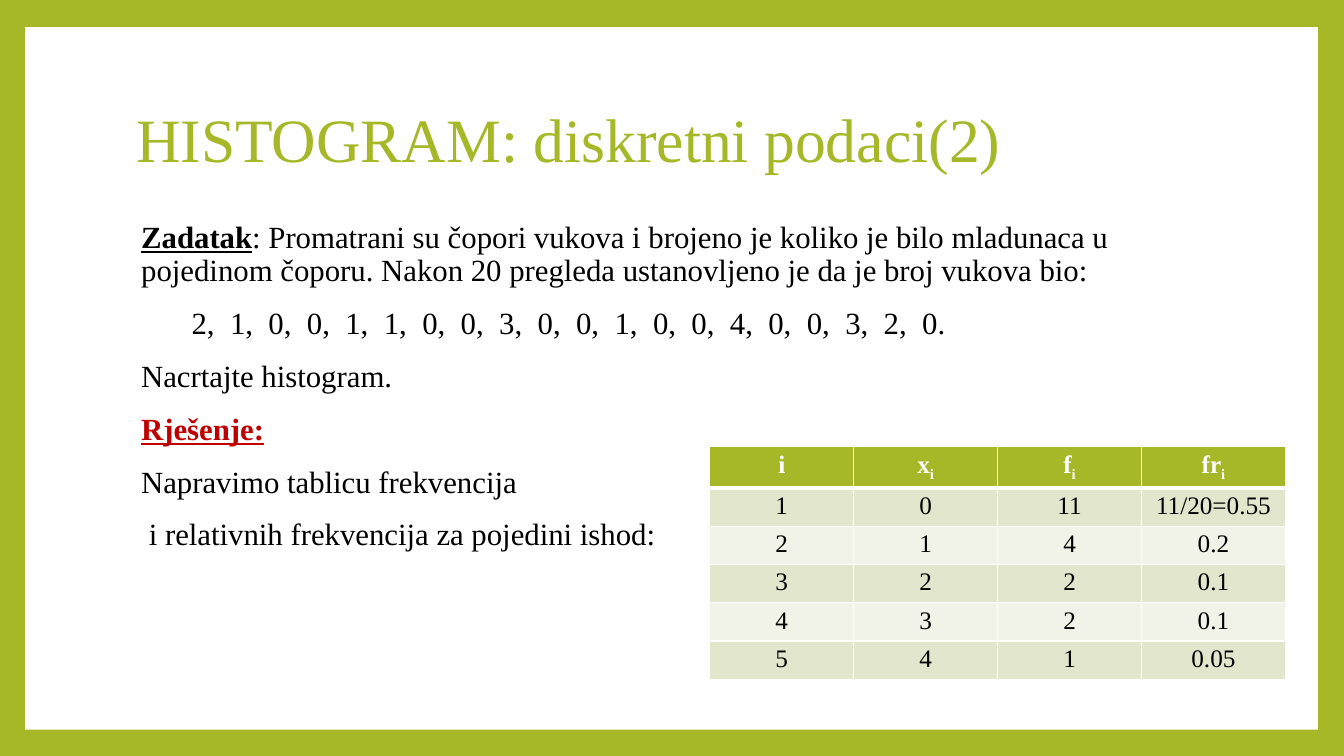
from lxml.etree import SubElement
from pptx import Presentation
from pptx.dml.color import RGBColor
from pptx.enum.shapes import MSO_SHAPE
from pptx.enum.text import MSO_ANCHOR, MSO_AUTO_SIZE, PP_ALIGN
from pptx.oxml.ns import qn
from pptx.util import Inches, Pt

GREEN = RGBColor(0xA6, 0xB7, 0x27)
DARK_BAND = RGBColor(0xE1, 0xE6, 0xCD)
LIGHT_BAND = RGBColor(0xF1, 0xF3, 0xE8)
WHITE = RGBColor(0xFF, 0xFF, 0xFF)
BLACK = RGBColor(0, 0, 0)
RED = RGBColor(0xC0, 0, 0)

TITLE = "HISTOGRAM: diskretni podaci(2)"
# Each paragraph: heading part, plain part, colour
BODY = [
    ("Zadatak", ": Promatrani su čopori vukova i brojeno je koliko je bilo mladunaca u "
     "pojedinom čoporu. Nakon 20 pregleda ustanovljeno je da je broj vukova bio:", BLACK),
    ("", "\t2,  1,  0,  0,  1,  1,  0,  0,  3,  0,  0,  1,  0,  0,  4,  0,  0,  3,  2,  0.", BLACK),
    ("", "Nacrtajte histogram.", BLACK),
    ("Rješenje:", "", RED),
    ("", "Napravimo tablicu frekvencija", BLACK),
    ("", " i relativnih frekvencija za pojedini ishod:", BLACK),
]
# Each header: symbol, subscript
HEADERS = [("i", ""), ("x", "i"), ("f", "i"), ("fr", "i")]
FREQUENCIES = [
    ("1", "0", "11", "11/20=0.55"),
    ("2", "1", "4", "0.2"),
    ("3", "2", "2", "0.1"),
    ("4", "3", "2", "0.1"),
    ("5", "4", "1", "0.05"),
]


class SlideBuilder:
    font_name = "Times New Roman"

    def __init__(self, presentation):
        self.slide = presentation.slides.add_slide(presentation.slide_layouts[1])
        self.shapes = self.slide.shapes

    def background(self, color):
        fill = self.slide.background.fill
        fill.solid()
        fill.fore_color.rgb = color

    def panel(self, left, top, width, height):
        """Add a white rectangle behind everything else."""
        shape = self.shapes.add_shape(MSO_SHAPE.RECTANGLE, Inches(left), Inches(top),
                                      Inches(width), Inches(height))
        shape.shadow.inherit = False
        shape.fill.solid()
        shape.fill.fore_color.rgb = WHITE
        shape.line.fill.background()
        self.shapes.element.insert(2, shape.element)

    def style(self, paragraph, size, color, bold=False):
        font = paragraph.font
        font.name, font.size, font.bold = self.font_name, Pt(size), bold
        font.color.rgb = color

    def place(self, placeholder, left, top, width, height, anchor):
        placeholder.left, placeholder.top = Inches(left), Inches(top)
        placeholder.width, placeholder.height = Inches(width), Inches(height)
        frame = placeholder.text_frame
        frame.word_wrap = True
        frame.auto_size = MSO_AUTO_SIZE.NONE
        frame.vertical_anchor = anchor
        return frame

    def title(self, text, *box):
        frame = self.place(self.shapes.title, *box, MSO_ANCHOR.MIDDLE)
        frame.text = text
        paragraph = frame.paragraphs[0]
        paragraph.alignment = PP_ALIGN.LEFT
        paragraph.line_spacing = 0.9
        self.style(paragraph, 44, GREEN)

    def body(self, items, *box):
        frame = self.place(self.slide.placeholders[1], *box, MSO_ANCHOR.TOP)
        for index, (heading, text, color) in enumerate(items):
            paragraph = frame.add_paragraph() if index else frame.paragraphs[0]
            paragraph.line_spacing = 0.9
            paragraph.space_before = Pt(14)
            properties = paragraph._p.get_or_add_pPr()
            properties.set("marL", str(Inches(0.05)))
            properties.set("indent", "0")
            SubElement(properties, qn("a:buNone"))
            self.style(paragraph, 22, color)
            if heading:
                run = paragraph.add_run()
                run.text = heading
                run.font.bold = run.font.underline = True
            if text:
                paragraph.add_run().text = text

    def borders(self, cell, bottom):
        properties = cell._tc.get_or_add_tcPr()
        for side, width in (("L", 1), ("R", 1), ("T", 1), ("B", bottom)):
            line = SubElement(properties, qn(f"a:ln{side}"), w=str(Pt(width)))
            fill = SubElement(line, qn("a:solidFill"))
            SubElement(fill, qn("a:srgbClr"), val=str(WHITE))

    def cell(self, cell, text, subscript, fill, color, bold=False, bottom=1):
        self.borders(cell, bottom)
        cell.fill.solid()
        cell.fill.fore_color.rgb = fill
        cell.margin_top = cell.margin_bottom = Inches(0.04)
        paragraph = cell.text_frame.paragraphs[0]
        paragraph.alignment = PP_ALIGN.CENTER
        self.style(paragraph, 18, color, bold)
        paragraph.add_run().text = text
        if subscript:
            run = paragraph.add_run()
            run.text = subscript
            run._r.get_or_add_rPr().set("baseline", "-25000")

    def table(self, headers, rows, left, top, width, header_height, row_height):
        height = header_height + row_height * len(rows)
        table = self.shapes.add_table(len(rows) + 1, len(headers), Inches(left), Inches(top),
                                      Inches(width), Inches(height)).table
        for row in table.rows:
            row.height = Inches(row_height)
        table.rows[0].height = Inches(header_height)
        for column, (symbol, subscript) in enumerate(headers):
            self.cell(table.cell(0, column), symbol, subscript, GREEN, WHITE, bold=True, bottom=3)
        for index, values in enumerate(rows, start=1):
            band = DARK_BAND if index % 2 else LIGHT_BAND
            for column, value in enumerate(values):
                self.cell(table.cell(index, column), value, "", band, BLACK)


def main():
    presentation = Presentation()
    presentation.slide_width = Inches(13.33)
    presentation.slide_height = Inches(7.5)
    builder = SlideBuilder(presentation)
    builder.background(GREEN)
    builder.panel(0.25, 0.27, 12.82, 6.97)
    builder.title(TITLE, 1.25, 0.67, 10.8, 1.48)
    builder.body(BODY, 1.25, 2.15, 10.8, 4.42)
    builder.table(HEADERS, FREQUENCIES, 7.04, 4.43, 5.71, 0.41, 0.38)
    presentation.save("out.pptx")


if __name__ == "__main__":
    main()
